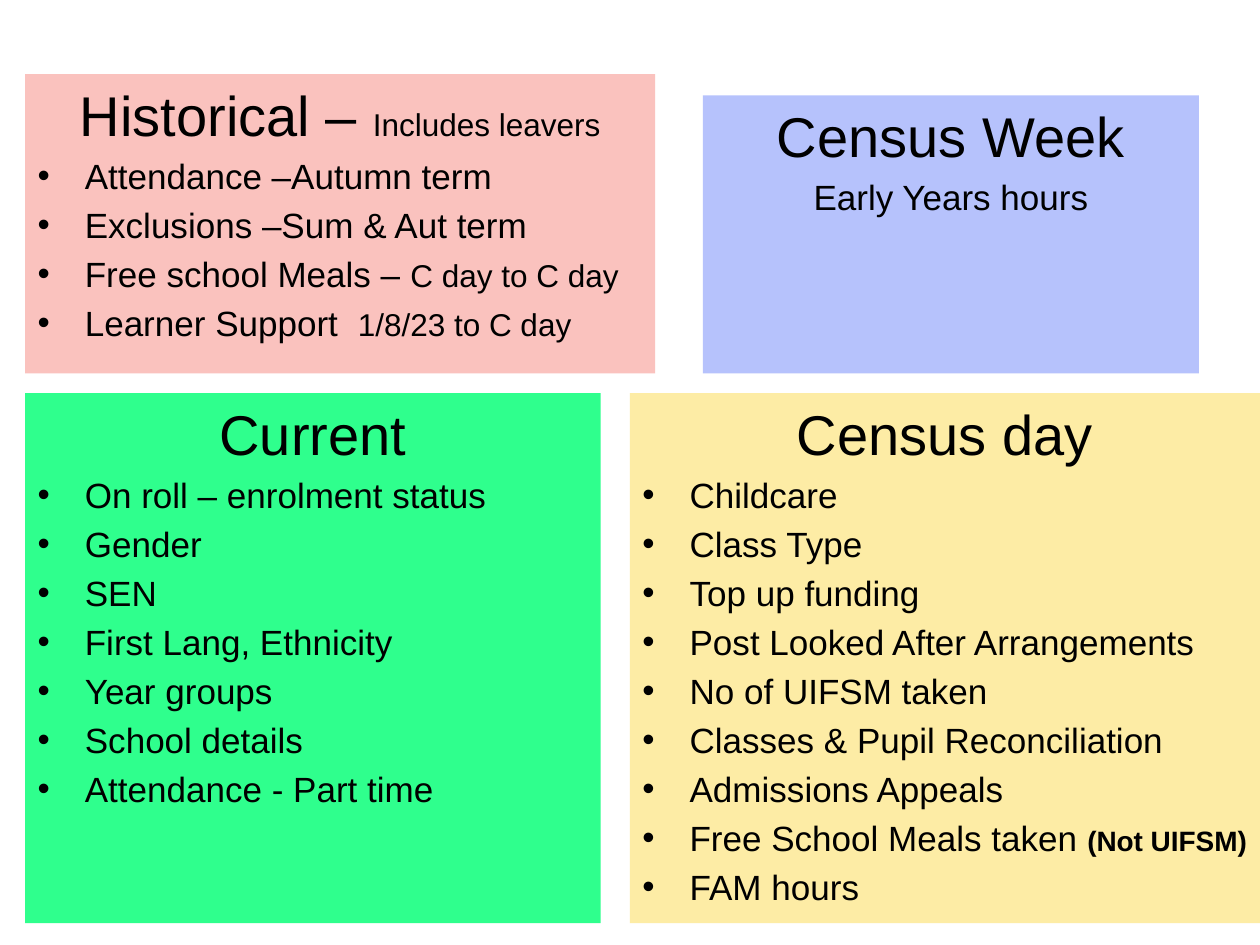
from pptx import Presentation
from pptx.dml.color import RGBColor
from pptx.enum import shapes, text
from pptx.oxml import xmlchemy as xml
from pptx.util import Pt

HUES = {"pink": "FAC2BE", "green": "2FFF8D", "blue": "B6C2FC",
        "cream": "FDECA5", "ink": "000000"}
FRAME = {"word_wrap": True, "vertical_anchor": text.MSO_ANCHOR.TOP,
         "margin_left": Pt(7.2), "margin_right": Pt(7),
         "margin_top": Pt(3.6), "margin_bottom": Pt(3.6)}
HEAD = {"name": "Arial", "size": Pt(32), "bold": False}
BODY = {**HEAD, "size": Pt(20)}
NOTE = {**HEAD, "size": Pt(18)}
BOLD = {**HEAD, "size": Pt(16), "bold": True}

PAST = ["Attendance –Autumn term", "Exclusions –Sum & Aut term",
        [("Free school Meals – ", BODY), ("C day to C day", NOTE)],
        [("Learner Support  ", BODY), ("1/8/23 to C day", NOTE)]]
NOW = ["On roll – enrolment status", "Gender", "SEN", "First Lang, Ethnicity",
       "Year groups", "School details", "Attendance - Part time"]
DAY = ["Childcare", "Class Type", "Top up funding",
       "Post Looked After Arrangements", "No of UIFSM taken",
       "Classes & Pupil Reconciliation", "Admissions Appeals",
       [("Free School Meals taken ", BODY), ("(Not UIFSM)", BOLD)],
       "FAM hours"]


def style(item, form):
    for key, value in form.items():
        setattr(item, key, value)


def write(para, runs, align):
    para.alignment = align
    for words, form in runs:
        run = para.add_run()
        run.text = words
        style(run.font, form)
        run.font.color.rgb = RGBColor.from_string(HUES["ink"])


def mark(para):
    props = para._p.get_or_add_pPr()
    props.set("marL", str(Pt(27)))
    props.set("indent", str(Pt(-27)))
    for tag, key, value in (("a:buFont", "typeface", "Arial"),
                            ("a:buChar", "char", "•")):
        part = xml.OxmlElement(tag)
        part.set(key, value)
        props.append(part)
    para.font.size = BODY["size"]


def panel(slide, box, hue, title, items, dots=True):
    card = slide.shapes.add_shape(shapes.MSO_SHAPE.RECTANGLE, *map(Pt, box))
    card.shadow.inherit = False
    card.fill.solid()
    card.fill.fore_color.rgb = RGBColor.from_string(HUES[hue])
    card.line.fill.background()
    frame = card.text_frame
    style(frame, FRAME)
    write(frame.paragraphs[0], title, text.PP_ALIGN.CENTER)
    align = text.PP_ALIGN.LEFT if dots else text.PP_ALIGN.CENTER
    for item in items:
        para = frame.add_paragraph()
        para.space_before = Pt(4)
        if dots:
            mark(para)
        runs = [(item, BODY)] if isinstance(item, str) else item
        write(para, runs, align)


def main():
    deck = Presentation()
    deck.slide_width, deck.slide_height = Pt(720), Pt(540)
    slide = deck.slides.add_slide(deck.slide_layouts[6])
    panel(slide, (14.4, 42.4, 360, 171), "pink",
          [("Historical – ", HEAD), ("Includes leavers", NOTE)], PAST)
    panel(slide, (14.4, 224.6, 328.8, 303), "green", [("Current", HEAD)], NOW)
    panel(slide, (401.6, 54.6, 283.5, 158.8), "blue",
          [("Census Week", HEAD)], ["Early Years hours"], dots=False)
    panel(slide, (360, 224.6, 360, 303), "cream", [("Census day", HEAD)], DAY)
    deck.save("out.pptx")


if __name__ == "__main__":
    main()
